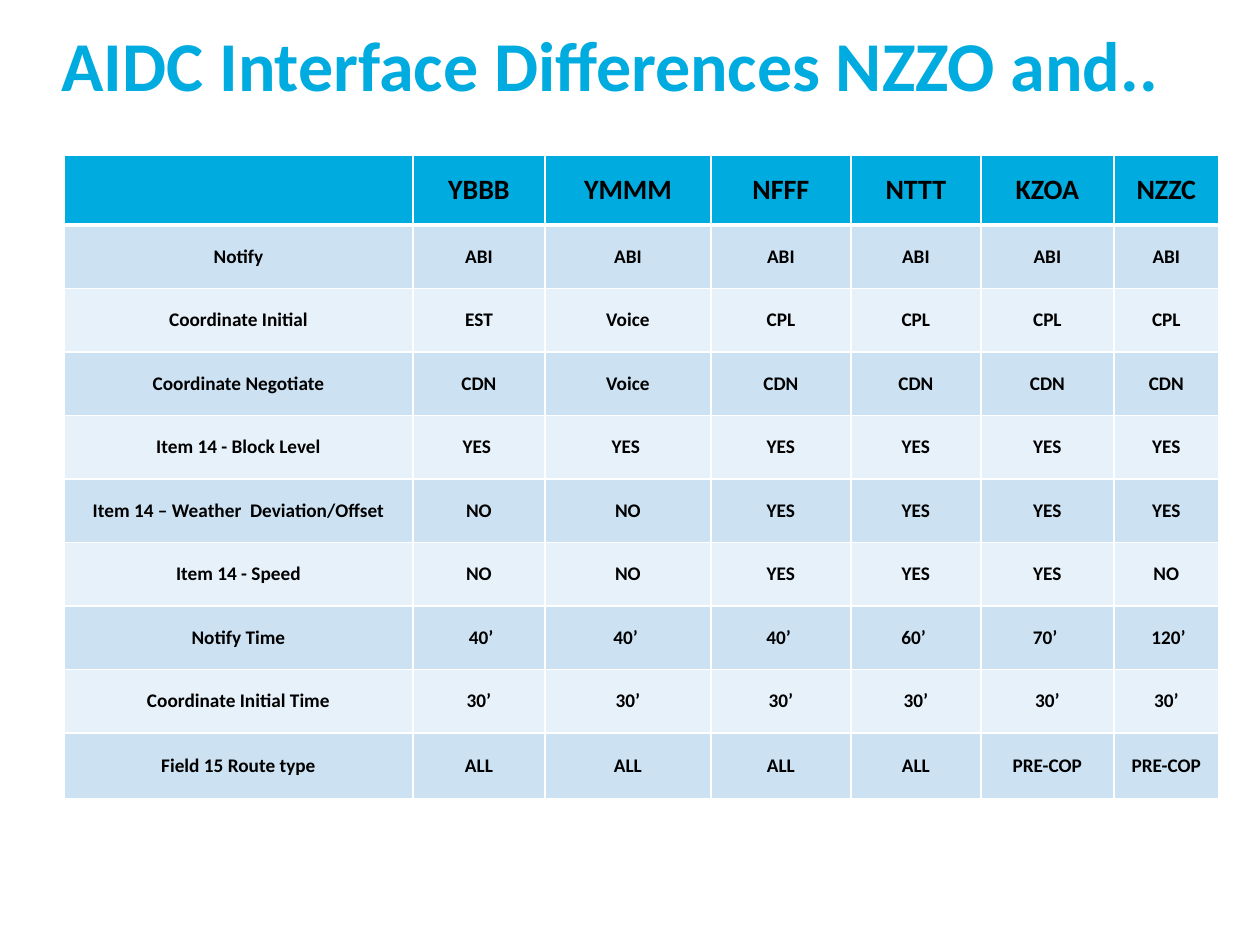
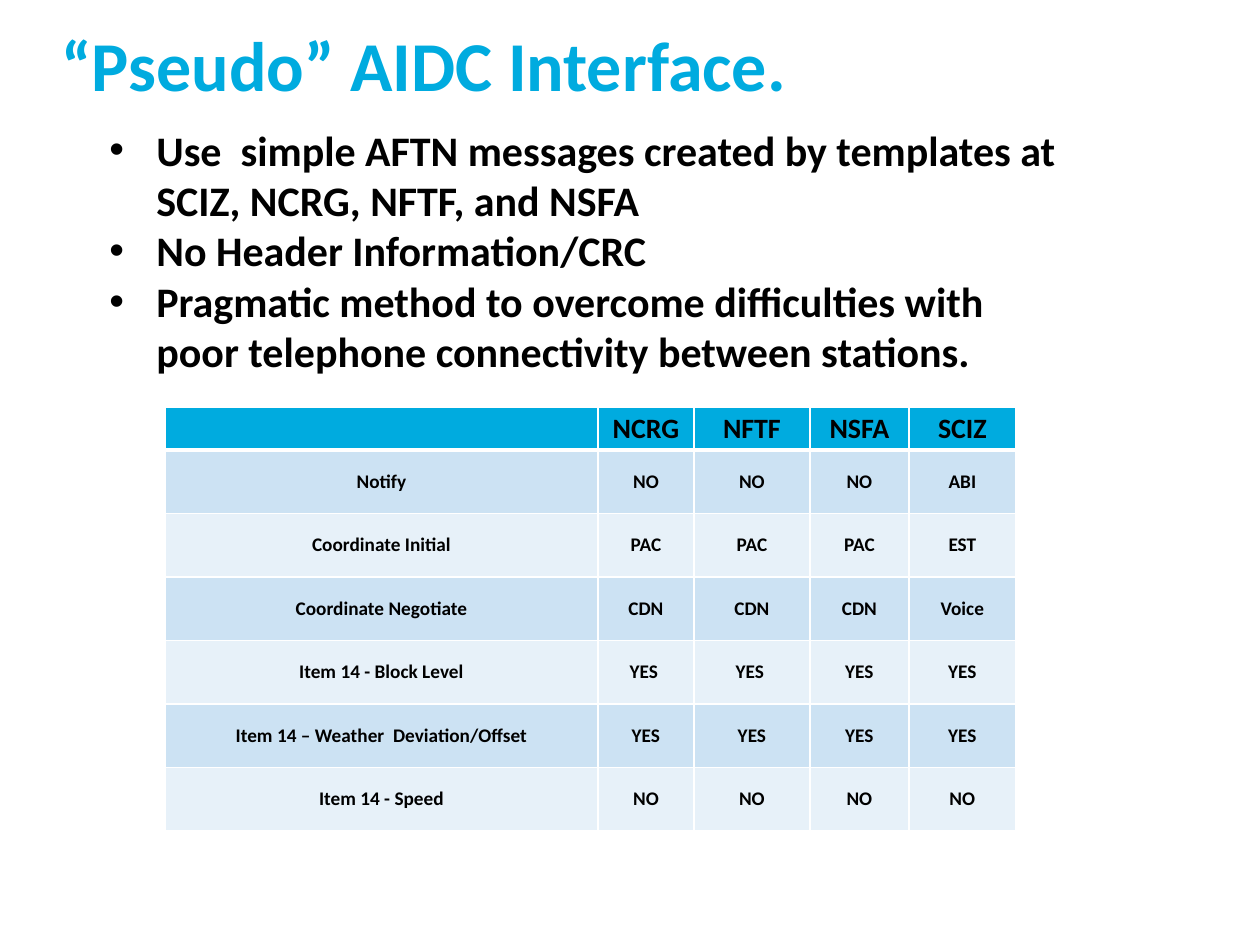
from lxml.etree import SubElement
from pptx import Presentation
from pptx.dml.color import RGBColor
from pptx.enum.text import MSO_ANCHOR, MSO_AUTO_SIZE, PP_ALIGN
from pptx.oxml.ns import qn
from pptx.util import Pt

EMU_PER_PX = 914400 / 126
FONT = "Calibri"
BLUE, BLACK, WHITE = "00ABDF", "000000", "FFFFFF"
BANDS = ["CCE2F3", "E7F1F9"]
TITLE_ONLY = 5


def px(n):
    return round(n * EMU_PER_PX)


ROW_H = px(127) // 2


def rgb(color):
    return RGBColor.from_string(color)


def write_text(p, text, size, color=BLACK, bold=True, align=PP_ALIGN.LEFT):
    p.alignment = align
    r = p.add_run()
    r.text = text
    r.font.name = FONT
    r.font.size = Pt(size)
    r.font.bold = bold
    r.font.color.rgb = rgb(color)


def add_slide(prs, title):
    """Add a slide with its background and blue title."""
    s = prs.slides.add_slide(prs.slide_layouts[TITLE_ONLY])
    s.background.fill.solid()
    s.background.fill.fore_color.rgb = rgb(WHITE)
    sp = s.shapes.title
    sp.left, sp.top, sp.width, sp.height = px(49), px(20), px(1189), px(88)
    tf = sp.text_frame
    tf.word_wrap = True
    tf.auto_size = MSO_AUTO_SIZE.NONE
    tf.vertical_anchor = MSO_ANCHOR.MIDDLE
    write_text(tf.paragraphs[0], title, 40, BLUE)
    return s


def set_border(cell, side, width):
    ln = SubElement(cell._tc.get_or_add_tcPr(), qn(f"a:ln{side}"), w=str(Pt(width)))
    fill = SubElement(ln, qn("a:solidFill"))
    SubElement(fill, qn("a:srgbClr"), val=WHITE)


def format_cell(cell, text, row):
    is_header = row == 0
    widths = {"L": 1, "R": 1, "T": 3 if row == 1 else 1, "B": 3 if is_header else 1}
    for side, width in widths.items():
        set_border(cell, side, width)
    cell.fill.solid()
    cell.fill.fore_color.rgb = rgb(BLUE if is_header else BANDS[(row - 1) % 2])
    cell.margin_left = cell.margin_right = px(9)
    cell.margin_top = cell.margin_bottom = 0
    cell.vertical_anchor = MSO_ANCHOR.MIDDLE
    if text:
        write_text(cell.text_frame.paragraphs[0], text, 16 if is_header else 11,
                   align=PP_ALIGN.CENTER)


def add_interface_table(s, left, top, col_widths, header_h, rows, last_h=ROW_H):
    heights = [header_h] + [ROW_H] * (len(rows) - 2) + [last_h]
    table = s.shapes.add_table(len(rows), len(col_widths), px(left), px(top),
                               px(sum(col_widths)), sum(heights)).table
    for column, width in zip(table.columns, col_widths):
        column.width = px(width)
    for i, (values, height) in enumerate(zip(rows, heights)):
        table.rows[i].height = height
        for j, text in enumerate(values):
            format_cell(table.cell(i, j), text, i)


def add_bullets(s, left, top, width, height, items, indent=47):
    tf = s.shapes.add_textbox(px(left), px(top), px(width), px(height)).text_frame
    tf.word_wrap = True
    tf.auto_size = MSO_AUTO_SIZE.SHAPE_TO_FIT_TEXT
    for i, item in enumerate(items):
        p = tf.add_paragraph() if i else tf.paragraphs[0]
        pPr = p._p.get_or_add_pPr()
        pPr.set("marL", str(px(indent)))
        pPr.set("indent", str(-px(indent)))
        SubElement(pPr, qn("a:buFont"), typeface="Arial")
        SubElement(pPr, qn("a:buChar"), char="•")
        write_text(p, item, 24)


AIDC_ROWS = [
    ["", "YBBB", "YMMM", "NFFF", "NTTT", "KZOA", "NZZC"],
    ["Notify"] + ["ABI"] * 6,
    ["Coordinate Initial", "EST", "Voice"] + ["CPL"] * 4,
    ["Coordinate Negotiate", "CDN", "Voice"] + ["CDN"] * 4,
    ["Item 14 - Block Level", "YES ", "YES "] + ["YES"] * 4,
    ["Item 14 – Weather  Deviation/Offset", "NO", "NO"] + ["YES"] * 4,
    ["Item 14 - Speed", "NO", "NO", "YES", "YES", "YES", "NO"],
    ["Notify Time", " 40’", "40’ ", "40’ ", "60’ ", "70’ ", " 120’"],
    ["Coordinate Initial Time"] + ["30’"] * 6,
    ["Field 15 Route type"] + ["ALL"] * 4 + ["PRE-COP"] * 2,
]

PSEUDO_ROWS = [
    ["", "NCRG", "NFTF", "NSFA", "SCIZ"],
    ["Notify", "NO", "NO", "NO", "ABI"],
    ["Coordinate Initial", "PAC", "PAC", "PAC", "EST"],
    ["Coordinate Negotiate", "CDN", "CDN", "CDN", "Voice"],
    ["Item 14 - Block Level", "YES ", "YES ", "YES", "YES"],
    ["Item 14 – Weather  Deviation/Offset"] + ["YES"] * 4,
    ["Item 14 - Speed"] + ["NO"] * 4,
]

PSEUDO_POINTS = [
    "Use  simple AFTN messages created by templates at SCIZ, NCRG, NFTF, and NSFA",
    "No Header Information/CRC",
    "Pragmatic method to overcome difficulties with poor telephone connectivity "
    "between stations.",
]


def main():
    prs = Presentation()
    prs.slide_width, prs.slide_height = px(1260), px(945)

    # Differences between NZZO and its neighbours
    s = add_slide(prs, "AIDC Interface Differences NZZO and..")
    add_interface_table(s, 64, 155, [349, 132, 166, 140, 130, 133, 105], px(70),
                        AIDC_ROWS, last_h=px(66))

    # Template-based interface
    s = add_slide(prs, "“Pseudo” AIDC Interface.")
    add_interface_table(s, 165, 407, [433, 96, 116, 99, 107], px(43), PSEUDO_ROWS)
    add_bullets(s, 97, 118, 987, 318, PSEUDO_POINTS)

    prs.save("out.pptx")


if __name__ == "__main__":
    main()
